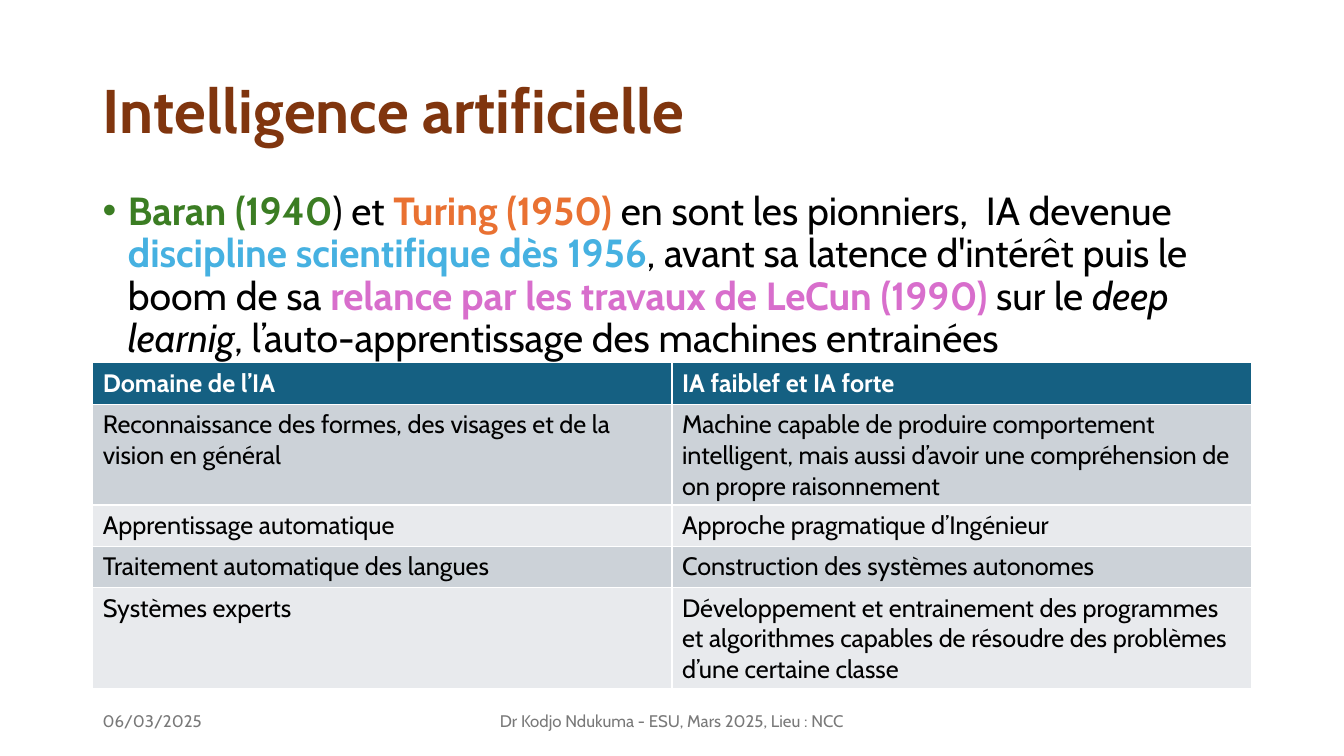
from lxml.etree import SubElement
from pptx import Presentation
from pptx.dml.color import RGBColor
from pptx.enum.text import MSO_ANCHOR, PP_ALIGN
from pptx.oxml.ns import qn
from pptx.util import Inches, Pt

FONT = "Cabin"
BLACK = RGBColor(0, 0, 0)
WHITE = RGBColor(255, 255, 255)
BROWN = RGBColor(0x80, 0x35, 0x0E)
GREEN = RGBColor(0x3B, 0x7D, 0x23)
ORANGE = RGBColor(0xE9, 0x71, 0x32)
SKY = RGBColor(0x46, 0xB1, 0xE1)
PINK = RGBColor(0xD8, 0x6E, 0xCC)
GREY = RGBColor(0x79, 0x79, 0x79)
TEAL = RGBColor(0x15, 0x60, 0x82)
BANDS = RGBColor(0xCC, 0xD2, 0xD8), RGBColor(0xE8, 0xEA, 0xED)

TITLE = "Intelligence artificielle"
# text, colour, bold, italic
INTRO = [
    ("Baran (1940", GREEN, True, False),
    (") et ", BLACK, False, False),
    ("Turing (1950) ", ORANGE, True, False),
    ("en sont les pionniers,  IA devenue ", BLACK, False, False),
    ("discipline scientifique dès 1956", SKY, True, False),
    (", avant sa latence d'intérêt puis le boom de sa ", BLACK, False, False),
    ("relance par les travaux de LeCun (1990) ", PINK, True, False),
    ("sur le ", BLACK, False, False),
    ("deep learnig", BLACK, False, True),
    (", l’auto-apprentissage des machines entrainées", BLACK, False, False),
]
ROWS = [
    ("Domaine de l’IA", "IA faiblef et IA forte"),
    ("Reconnaissance des formes, des visages et de la vision en général",
     "Machine capable de produire comportement intelligent, mais aussi "
     "d’avoir une compréhension de on propre raisonnement"),
    ("Apprentissage automatique", "Approche pragmatique d’Ingénieur"),
    ("Traitement automatique des langues", "Construction des systèmes autonomes"),
    ("Systèmes experts",
     "Développement et entrainement des programmes et algorithmes capables "
     "de résoudre des problèmes d’une certaine classe"),
]
DATE = "06/03/2025"
PLACE = "Dr Kodjo Ndukuma - ESU, Mars 2025, Lieu : NCC"

WIDE, HIGH = Inches(13.33), Inches(7.5)
LEFT = Inches(0.92)
SPAN = WIDE - 2 * LEFT
ROW = Inches(0.41)
FOOT = Inches(6.95)


def style(run, size, color, bold=False, italic=False):
    font = run.font
    font.name, font.size = FONT, Pt(size)
    font.bold, font.italic = bold, italic
    font.color.rgb = color


def add_box(slide, left, top, width, height):
    frame = slide.shapes.add_textbox(left, top, width, height).text_frame
    frame.word_wrap = True
    return frame


def add_title(slide):
    title = slide.shapes.title
    title.left, title.top = LEFT, Inches(0.4)
    title.width, title.height = SPAN, Inches(1.45)
    frame = title.text_frame
    frame.text = TITLE
    frame.vertical_anchor = MSO_ANCHOR.MIDDLE
    para = frame.paragraphs[0]
    para.alignment, para.line_spacing = PP_ALIGN.LEFT, 0.9
    style(para.runs[0], 44, BROWN, True)


def add_intro(slide):
    para = add_box(slide, LEFT, Inches(1.85), SPAN, Inches(4.91)).paragraphs[0]
    para.line_spacing, para.space_before = 0.9, Pt(10)
    props = para._p.get_or_add_pPr()
    props.set("marL", str(Inches(0.25)))
    props.set("indent", str(-Inches(0.25)))
    SubElement(props, qn("a:buFont")).set("typeface", "Arial")
    SubElement(props, qn("a:buChar")).set("char", "•")
    for text, color, bold, italic in INTRO:
        run = para.add_run()
        run.text = text
        style(run, 28, color, bold, italic)


def add_grid(slide):
    table = slide.shapes.add_table(len(ROWS), len(ROWS[0]), LEFT, Inches(3.6),
                                   SPAN, ROW * len(ROWS)).table
    for r, texts in enumerate(ROWS):
        head = r == 0
        for c, text in enumerate(texts):
            cell = table.cell(r, c)
            cell.text = text
            cell.fill.solid()
            cell.fill.fore_color.rgb = TEAL if head else BANDS[(r - 1) % 2]
            style(cell.text_frame.paragraphs[0].runs[0], 18,
                  WHITE if head else BLACK, head)


def add_foot(slide, text, left, width, align):
    frame = add_box(slide, left, FOOT, width, Inches(0.4))
    frame.text = text
    frame.vertical_anchor = MSO_ANCHOR.MIDDLE
    para = frame.paragraphs[0]
    para.alignment = align
    style(para.runs[0], 12, GREY)


def main():
    deck = Presentation()
    deck.slide_width, deck.slide_height = WIDE, HIGH
    slide = deck.slides.add_slide(deck.slide_layouts.get_by_name("Title Only"))
    add_title(slide)
    add_intro(slide)
    add_grid(slide)
    add_foot(slide, DATE, LEFT, Inches(3), PP_ALIGN.LEFT)
    mid = Inches(4.5)
    add_foot(slide, PLACE, (WIDE - mid) // 2, mid, PP_ALIGN.CENTER)
    deck.save("out.pptx")


if __name__ == "__main__":
    main()
